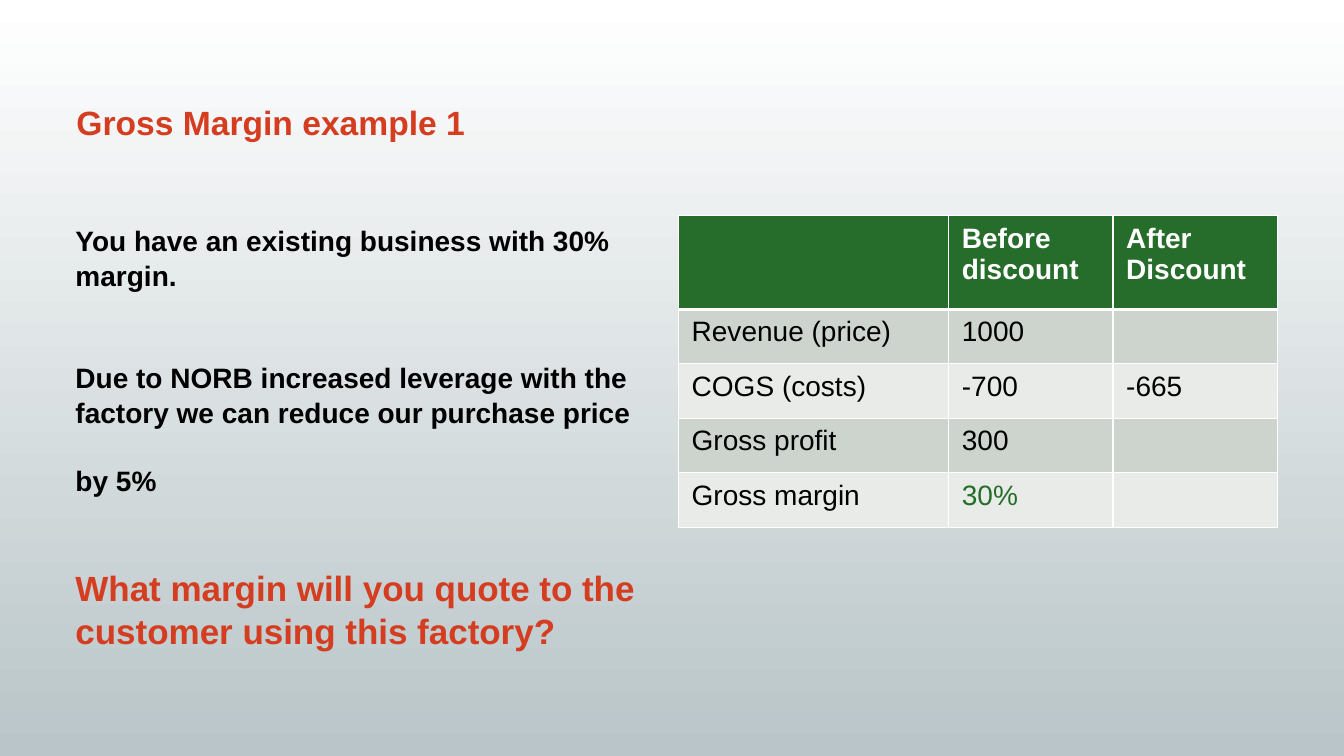
from lxml import etree
from pptx import Presentation
from pptx.dml.color import RGBColor
from pptx.enum.shapes import MSO_SHAPE
from pptx.oxml.ns import qn
from pptx.util import Inches, Pt

RECTANGLE = MSO_SHAPE.RECTANGLE
FONT = "Arial"
RED, GREEN, BLACK, WHITE = "D53D20", "266D2B", "000000", "FFFFFF"
MIST = "B9C5C8"
BANDS = ("CDD4CD", "E8EBE8")

TITLE = "Gross Margin example 1"
# text, size, colour, points of space after
BODY = [
    ("You have an existing business with 30% margin.", 20, BLACK, 48),
    ("Due to NORB increased leverage with the factory we can reduce our purchase price",
     20, BLACK, 24),
    ("by 5%", 20, BLACK, 48),
    ("What margin will you quote to the customer using this factory?", 25, RED, 0),
]
MARGIN_TABLE = [
    ("", "Before discount", "After Discount"),
    ("Revenue (price)", "1000", ""),
    ("COGS (costs)", "-700", "-665"),
    ("Gross profit", "300", ""),
    ("Gross margin", "30%", ""),
]
COLUMN_WIDTHS = (2.68, 1.63, 1.63)
HEADER_HEIGHT, ROW_HEIGHT = 0.93, 0.54


def colour(hex_code):
    return RGBColor.from_string(hex_code)


def add_span(para, text, size, hex_code, bold):
    span = para.add_run()
    span.text = text
    span.font.name = FONT
    span.font.size = Pt(size)
    span.font.bold = bold
    span.font.color.rgb = colour(hex_code)


def add_text(page, left, top, width, height, lines, spacing):
    box = page.shapes.add_textbox(Inches(left), Inches(top), Inches(width), Inches(height))
    frame = box.text_frame
    frame.word_wrap = True
    frame.margin_left = Inches(0.1)
    frame.margin_right = Inches(0.05)
    frame.margin_top = frame.margin_bottom = Inches(0.07)
    for index, (text, size, hex_code, gap) in enumerate(lines):
        para = frame.add_paragraph() if index else frame.paragraphs[0]
        para.line_spacing = spacing
        para.space_after = Pt(gap)
        add_span(para, text, size, hex_code, True)


def set_borders(cell, widths):
    """Draw white cell edges; widths maps an edge tag to points."""
    properties = cell._tc.get_or_add_tcPr()
    for index, (edge, width) in enumerate(widths.items()):
        line = etree.Element(qn(f"a:{edge}"), w=str(Pt(width)))
        fill = etree.SubElement(line, qn("a:solidFill"))
        etree.SubElement(fill, qn("a:srgbClr"), val=WHITE)
        properties.insert(index, line)


def add_backdrop(page, width, height):
    backdrop = page.shapes.add_shape(RECTANGLE, 0, 0, width, height)
    backdrop.shadow.inherit = False
    backdrop.line.fill.background()
    backdrop.fill.gradient()
    backdrop.fill.gradient_angle = 90
    for stop, hex_code in zip(backdrop.fill.gradient_stops, (MIST, WHITE)):
        stop.color.rgb = colour(hex_code)


def add_margin_table(page, left, top):
    heights = [HEADER_HEIGHT] + [ROW_HEIGHT] * (len(MARGIN_TABLE) - 1)
    table = page.shapes.add_table(
        len(heights), len(COLUMN_WIDTHS), Inches(left), Inches(top),
        Inches(sum(COLUMN_WIDTHS)), Inches(sum(heights))).table
    for column, width in zip(table.columns, COLUMN_WIDTHS):
        column.width = Inches(width)
    for row_index, values in enumerate(MARGIN_TABLE):
        table.rows[row_index].height = Inches(heights[row_index])
        header = row_index == 0
        for column_index, value in enumerate(values):
            cell = table.cell(row_index, column_index)
            cell.margin_left = cell.margin_right = Inches(0.13)
            cell.margin_top = cell.margin_bottom = Inches(0.07)
            cell.fill.solid()
            cell.fill.fore_color.rgb = colour(GREEN if header else BANDS[(row_index - 1) % 2])
            set_borders(cell, {"lnL": 1, "lnR": 1, "lnT": 3 if row_index == 1 else 1,
                               "lnB": 3 if header else 1})
            if value:
                ink = WHITE if header else GREEN if value == "30%" else BLACK
                add_span(cell.text_frame.paragraphs[0], value, 20, ink, header)


def main():
    deck = Presentation()
    deck.slide_width, deck.slide_height = Inches(13.33), Inches(7.5)
    page = deck.slides.add_slide(deck.slide_layouts[6])
    add_backdrop(page, deck.slide_width, deck.slide_height)
    add_text(page, 0.66, 0.94, 12.02, 0.91, [(TITLE, 24, RED, 0)], 1.0)
    add_text(page, 0.65, 2.13, 5.75, 4.42, BODY, 1.04)
    add_margin_table(page, 6.73, 2.14)
    deck.save("out.pptx")


if __name__ == "__main__":
    main()
